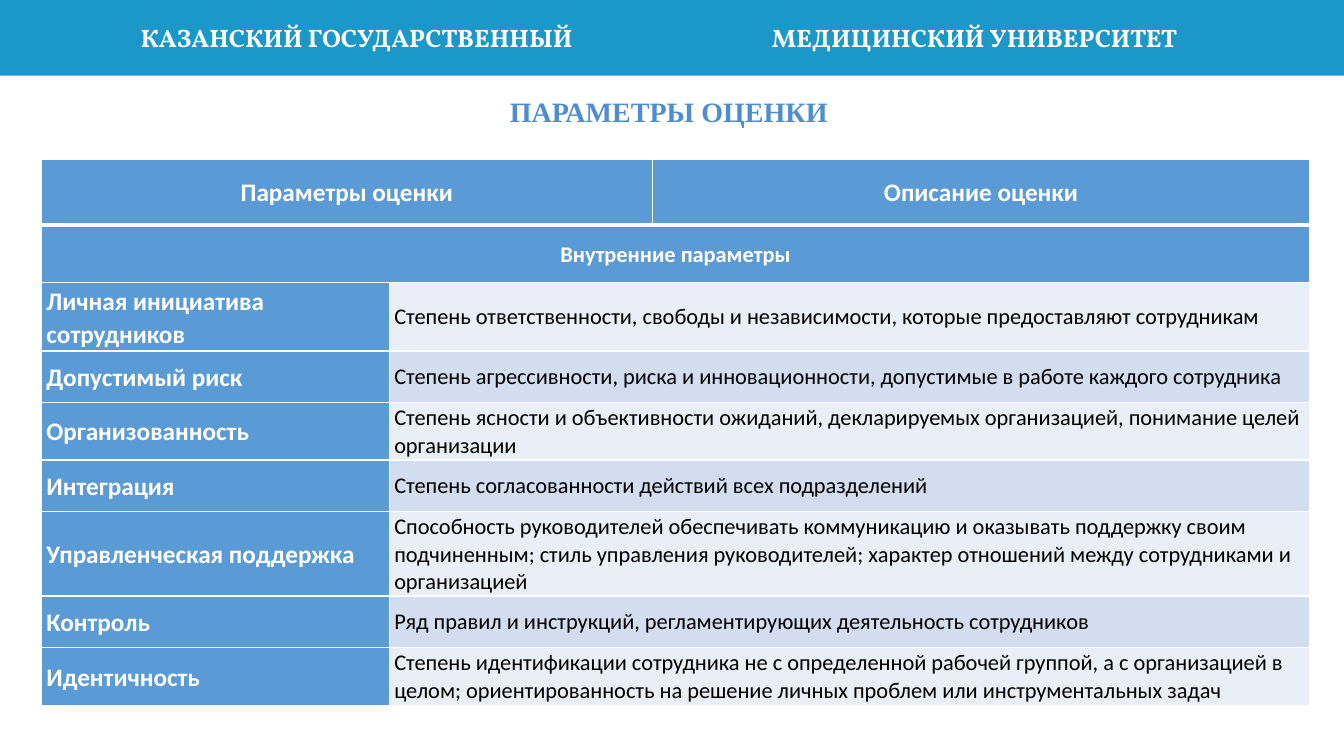
from lxml.etree import SubElement as Sub
from pptx import Presentation
from pptx.dml.color import RGBColor as Color
from pptx.enum.shapes import MSO_SHAPE as Shape
from pptx.enum.text import MSO_ANCHOR as Anchor, PP_ALIGN as Align
from pptx.oxml.ns import qn
from pptx.util import Inches, Pt

WHITE = Color(0xFF, 0xFF, 0xFF)
BLACK = Color(0, 0, 0)
TEAL = Color(0x1B, 0x97, 0xC8)
TITLE = Color(0x4E, 0x8D, 0xD1)
BLUE = Color(0x5B, 0x9B, 0xD5)
LIGHT = Color(0xEA, 0xEF, 0xF7)
MID = Color(0xD2, 0xDE, 0xEF)

ROWS = [
    ("Личная инициатива сотрудников",
     "Степень ответственности, свободы и независимости, которые предоставляют сотрудникам"),
    ("Допустимый риск",
     "Степень агрессивности, риска и инновационности, допустимые в работе каждого сотрудника"),
    ("Организованность",
     "Степень ясности и объективности ожиданий, декларируемых организацией, понимание целей организации"),
    ("Интеграция",
     "Степень согласованности действий всех подразделений"),
    ("Управленческая поддержка",
     "Способность руководителей обеспечивать коммуникацию и оказывать поддержку своим подчиненным; "
     "стиль управления руководителей; характер отношений между сотрудниками и организацией"),
    ("Контроль",
     "Ряд правил и инструкций, регламентирующих деятельность сотрудников"),
    ("Идентичность",
     "Степень идентификации сотрудника не с определенной рабочей группой, а с организацией в целом; "
     "ориентированность на решение личных проблем или инструментальных задач"),
]


class Deck:
    GRID = 100

    def __init__(self):
        self.prs = Presentation()
        self.prs.slide_width = Inches(13.33)
        self.prs.slide_height = Inches(7.5)
        self.slide = self.prs.slides.add_slide(self.prs.slide_layouts[6])

    def col(self, n):
        return round(self.prs.slide_width * n / self.GRID)

    def row(self, n):
        return round(self.prs.slide_height * n / self.GRID)

    def area(self, x, y, w, h):
        return self.col(x), self.row(y), self.col(w), self.row(h)

    def band(self, *area, fill):
        shape = self.slide.shapes.add_shape(Shape.RECTANGLE, *self.area(*area))
        shape.shadow.inherit = False
        shape.fill.solid()
        shape.fill.fore_color.rgb = fill
        shape.line.fill.background()

    def style(self, para, text, size, color, face="Calibri", bold=True, align=Align.LEFT):
        para.text = text
        para.alignment = align
        font = para.font
        font.size, font.bold, font.name = Pt(size), bold, face
        font.color.rgb = color

    def label(self, *area, text, size, color, face, align, anchor=Anchor.TOP):
        frame = self.slide.shapes.add_textbox(*self.area(*area)).text_frame
        frame.word_wrap = True
        frame.vertical_anchor = anchor
        para = frame.paragraphs[0]
        self.style(para, text, size, color, face, align=align)
        return para

    def table(self, x, y, cols, rows):
        area = self.area(x, y, sum(cols), sum(rows))
        grid = self.slide.shapes.add_table(len(rows), len(cols), *area).table
        for part, n in zip(grid.columns, cols):
            part.width = self.col(n)
        for part, n in zip(grid.rows, rows):
            part.height = self.row(n)
        return grid

    def edge(self, cell, top=1, base=1):
        props = cell._tc.get_or_add_tcPr()
        for side, width in zip("LRTB", (1, 1, top, base)):
            line = Sub(props, qn(f"a:ln{side}"), w=str(Pt(width)))
            fill = Sub(line, qn("a:solidFill"))
            Sub(fill, qn("a:srgbClr"), val=str(WHITE))

    def cell(self, cell, text, fill, size=18, color=WHITE, bold=True, align=Align.LEFT):
        cell.fill.solid()
        cell.fill.fore_color.rgb = fill
        cell.vertical_anchor = Anchor.MIDDLE
        cell.margin_left = cell.margin_right = Inches(0.05)
        cell.margin_top = cell.margin_bottom = Inches(0.02)
        para = cell.text_frame.paragraphs[0]
        if bold:
            para.line_spacing = 1.07
            para.space_after = Pt(8)
        self.style(para, text, size, color, bold=bold, align=align)


def main():
    deck = Deck()
    deck.band(0, 0, 100, 10, fill=TEAL)
    for x, text, align in ((6.9, "КАЗАНСКИЙ ГОСУДАРСТВЕННЫЙ", Align.RIGHT),
                           (56.7, "МЕДИЦИНСКИЙ УНИВЕРСИТЕТ", Align.LEFT)):
        deck.label(x, 2.27, 36.45, 5.33, text=text, size=18, color=WHITE,
                   face="Vollkorn", align=align)
    title = deck.label(6.9, 5.33, 86.25, 19.33, text="ПАРАМЕТРЫ ОЦЕНКИ ", size=20, color=TITLE,
                       face="Times New Roman", align=Align.CENTER, anchor=Anchor.MIDDLE)
    title.line_spacing = 0.9

    grid = deck.table(3.08, 21.07, [25.88, 19.58, 48.91], [8.67, 7.6] + [6.8] * len(ROWS))
    for i, row in enumerate(grid.rows):
        for cell in row.cells:
            deck.edge(cell, top=3 if i == 1 else 1, base=3 if i == 0 else 1)
    grid.cell(0, 0).merge(grid.cell(0, 1))
    grid.cell(1, 0).merge(grid.cell(1, 2))
    deck.cell(grid.cell(0, 0), "Параметры оценки", BLUE, align=Align.CENTER)
    deck.cell(grid.cell(0, 2), "Описание оценки", BLUE, align=Align.CENTER)
    deck.cell(grid.cell(1, 0), "Внутренние параметры", BLUE, size=16, align=Align.CENTER)
    for i, (name, text) in enumerate(ROWS, 2):
        grid.cell(i, 1).merge(grid.cell(i, 2))
        deck.cell(grid.cell(i, 0), name, BLUE)
        deck.cell(grid.cell(i, 1), text, MID if i % 2 else LIGHT, size=16, color=BLACK, bold=False)
    deck.prs.save("out.pptx")


if __name__ == "__main__":
    main()
